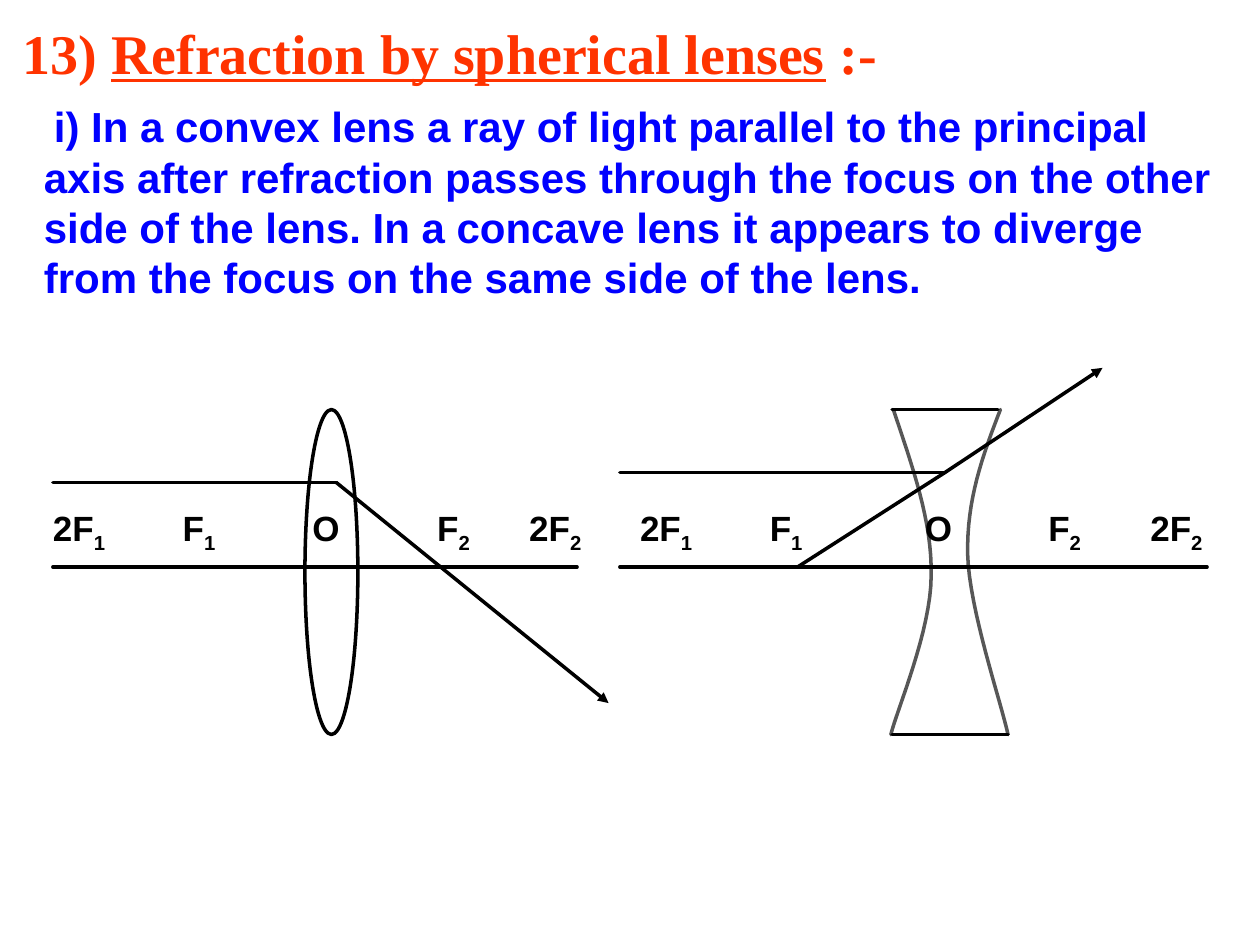
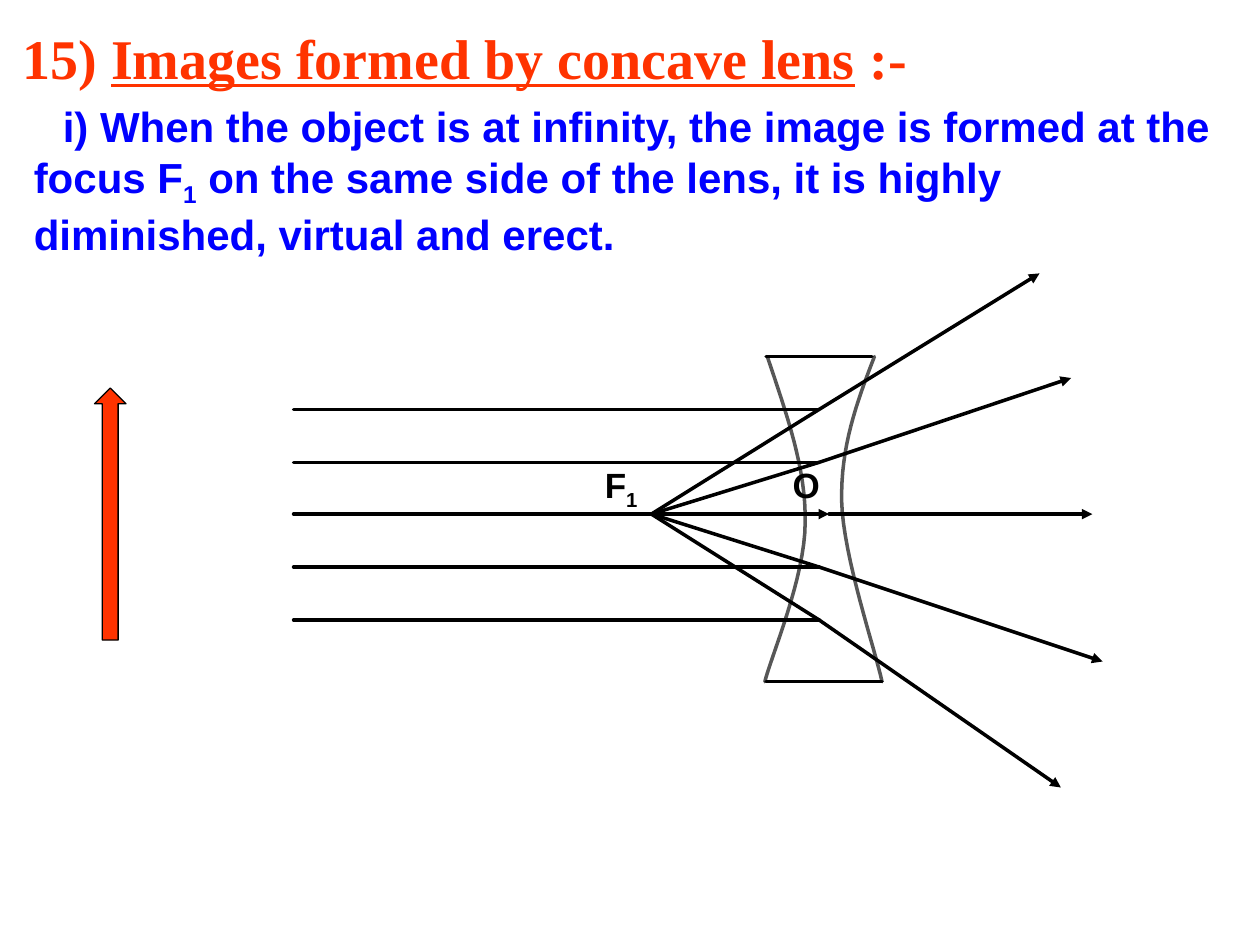
import pptx
import pptx.dml.color
import pptx.enum.shapes
import pptx.enum.text
import pptx.oxml
import pptx.oxml.ns
import pptx.util
from pptx.util import Inches

INK, HEADING, BODY = "000000", "FF3300", "0000FF"
LINE_WIDTH = 2


def color(hex_value):
    return pptx.dml.color.RGBColor.from_string(hex_value)


def write(slide, runs, box, size, ink, font="Arial", inset=0.0, indent=0.0,
          anchor="TOP", wrap=True, before=0.0):
    frame = slide.shapes.add_textbox(*map(Inches, box)).text_frame
    frame.word_wrap = wrap
    frame.vertical_anchor = pptx.enum.text.MSO_ANCHOR[anchor]
    frame.margin_left = frame.margin_right = Inches(inset)
    frame.margin_top = frame.margin_bottom = Inches(inset / 2)
    paragraph = frame.paragraphs[0]
    paragraph.space_before = pptx.util.Pt(before)
    paragraph._p.get_or_add_pPr().set("indent", str(Inches(indent)))
    for text, mark in runs:
        run = paragraph.add_run()
        run.text = text
        run.font.name, run.font.size = font, pptx.util.Pt(size)
        run.font.bold = True
        run.font.color.rgb = color(ink)
        if mark == "underline":
            run.font.underline = True
        if mark == "sub":
            run.font._element.set("baseline", "-25000")


axis_marks = [("2F", "1"), ("F", "1"), ("O", ""), ("F", "2"), ("2F", "2")]
convex_marks = [0.42, 1.45, 2.48, 3.47, 4.2]
concave_marks = [5.08, 6.11, 7.34, 8.32, 9.13]
refraction_labels = [(left, *mark) for lefts in (convex_marks, concave_marks)
                     for left, mark in zip(lefts, axis_marks)]
refraction_rays = [
    ((0.42, 4.5), (4.58, 4.5), False),
    ((4.92, 4.5), (9.58, 4.5), False),
    ((0.42, 3.83), (2.67, 3.83), False),
    ((2.67, 3.83), (4.83, 5.58), True),
    ((4.92, 3.75), (7.5, 3.75), False),
    ((7.5, 3.75), (8.75, 2.92), True),
    ((7.5, 3.75), (6.33, 4.5), False),
]

focus = (5.17, 4.08)
infinity_rays = [((2.33, 4.08), (6.58, 4.08), True), ((6.58, 4.08), (8.67, 4.08), True)]
for height, exit_point in [(3.25, (8.25, 2.17)), (3.67, (8.5, 3)),
                           (4.5, (8.75, 5.25)), (4.92, (8.42, 6.25))]:
    bend = (6.5, height)
    infinity_rays += [((2.33, height), bend, False), (focus, bend, False),
                      (bend, exit_point, True)]

topics = [
    dict(number="13) ", heading="Refraction by spherical lenses", heading_height=0.67,
         body=[("i) In a convex lens a ray of light parallel to the principal axis after "
                "refraction passes through the focus on the other side of the lens. In a "
                "concave lens it appears to diverge from the focus on the same side of "
                "the lens.", "")],
         body_left=0.25, indent=0.08, labels=refraction_labels, label_top=4.02,
         lens=(7, 3.25), rays=refraction_rays),
    dict(number="15) ", heading="Images formed by concave lens", heading_height=0.75,
         body=[("i) When the object is at infinity, the image is formed at the focus F", ""),
               ("1", "sub"),
               (" on the same side of the lens, it is highly diminished, virtual and "
                "erect.", "")],
         body_left=0.17, indent=0.23, labels=[(4.8, "F", "1"), (6.29, "O", "")],
         label_top=3.68, lens=(6, 2.83), rays=infinity_rays),
]

lens_sides = [
    [(0.09, 0), (0.24, 0.45), (0.4, 0.89), (0.39, 1.32), (0.39, 1.75), (0.12, 2.38), (0.07, 2.58)],
    [(0.94, 0), (0.8, 0.36), (0.67, 0.72), (0.68, 1.15), (0.69, 1.58), (0.95, 2.34), (1, 2.58)],
]
lens_rims = [((0.08, 0), (0.92, 0)), ((0.08, 2.58), (1, 2.58))]
curve_steps = 16

deck = pptx.Presentation()
deck.slide_width, deck.slide_height = Inches(10), Inches(7.5)

for topic in topics:
    slide = deck.slides.add_slide(deck.slide_layouts[6])
    write(slide, [(topic["number"], ""), (topic["heading"], "underline"), (" :-", "")],
          (0.08, 0.08, 8.5, topic["heading_height"]), 32, HEADING,
          font="Times New Roman", inset=0.1, anchor="MIDDLE")
    write(slide, topic["body"], (topic["body_left"], 0.75, 9.67, 1.75), 24, BODY,
          inset=0.1, indent=topic["indent"], before=4.8)
    for left, letter, index in topic["labels"]:
        runs = [(letter, ""), (index, "sub")] if index else [(letter, "")]
        write(slide, runs, (left, topic["label_top"], 0.5, 0.35), 20, INK, wrap=False)

    lens_left, lens_top = topic["lens"]
    outlines = []
    for side in lens_sides:
        points = []
        for first in (0, 3):
            a, b, c, d = side[first:first + 4]
            for step in range(curve_steps + 1):
                t = step / curve_steps
                x, y = (a[i] * (1 - t) ** 3 + 3 * b[i] * t * (1 - t) ** 2
                        + 3 * c[i] * t ** 2 * (1 - t) + d[i] * t ** 3 for i in (0, 1))
                points.append((Inches(lens_left + x), Inches(lens_top + y)))
        builder = slide.shapes.build_freeform(*points[0])
        builder.add_line_segments(points[1:], close=False)
        lens_side = builder.convert_to_shape()
        lens_side.fill.background()
        outlines.append((lens_side, LINE_WIDTH, 65, False))

    rims = [((lens_left + x1, lens_top + y1), (lens_left + x2, lens_top + y2), False)
            for (x1, y1), (x2, y2) in lens_rims]
    for start, end, arrow in rims + topic["rays"]:
        ray = slide.shapes.add_connector(pptx.enum.shapes.MSO_CONNECTOR.STRAIGHT,
                                         *map(Inches, start + end))
        outlines.append((ray, LINE_WIDTH, 100, arrow))

    if topic is topics[0]:
        convex_lens = slide.shapes.add_shape(pptx.enum.shapes.MSO_SHAPE.OVAL,
                                             *map(Inches, (2.42, 3.25, 0.42, 2.58)))
        convex_lens.fill.background()
        outlines.append((convex_lens, LINE_WIDTH, 100, False))
    else:
        distant_object = slide.shapes.add_shape(pptx.enum.shapes.MSO_SHAPE.UP_ARROW,
                                                *map(Inches, (0.75, 3.08, 0.25, 2)))
        distant_object.fill.solid()
        distant_object.fill.fore_color.rgb = color(HEADING)
        outlines.append((distant_object, 0.75, 100, False))

    for outline, width, opacity, arrow in outlines:
        outline.line.color.rgb = color(INK)
        outline.line.width = pptx.util.Pt(width)
        properties = outline._element.spPr
        stroke = properties.find(pptx.oxml.ns.qn("a:ln"))
        if opacity < 100:
            ink = stroke.find(".//" + pptx.oxml.ns.qn("a:srgbClr"))
            alpha = pptx.oxml.parse_xml(f'<a:alpha {pptx.oxml.ns.nsdecls("a")}/>')
            alpha.set("val", str(opacity * 1000))
            ink.append(alpha)
        if width == LINE_WIDTH:
            stroke.set("cap", "rnd")
        if arrow:
            stroke.append(pptx.oxml.parse_xml(
                f'<a:tailEnd {pptx.oxml.ns.nsdecls("a")} type="triangle"/>'))
        properties.append(pptx.oxml.parse_xml(f'<a:effectLst {pptx.oxml.ns.nsdecls("a")}/>'))

deck.save("out.pptx")
